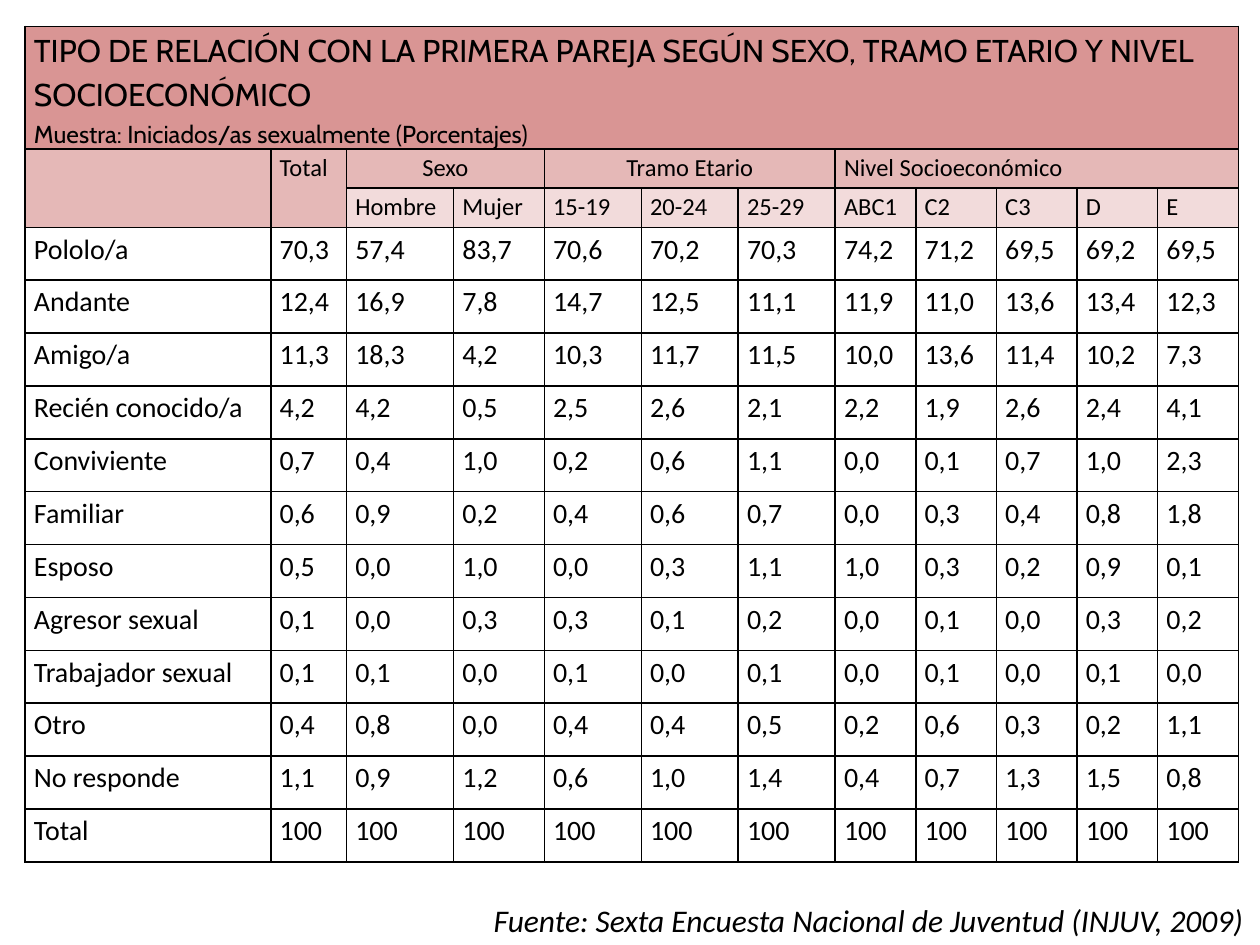
from lxml import etree
from pptx import Presentation
from pptx import util as u
from pptx.dml.color import RGBColor
from pptx.enum import text
from pptx.oxml.ns import qn

COLORS = {
    "ink": "000000",
    "title": "D99594",
    "group": "E5B8B7",
    "category": "F2DBDB",
}
COLUMN_WIDTHS = [1.95, 0.6, 0.85, 0.72] + [0.77] * 3 + [0.64] * 5
ROW_HEIGHTS = [0.77, 0.31, 0.31] + [0.42] * 12

TITLE = ("TIPO DE RELACIÓN CON LA PRIMERA PAREJA SEGÚN SEXO, "
         "TRAMO ETARIO Y NIVEL SOCIOECONÓMICO")
SUBTITLE = "Muestra: Iniciados/as sexualmente (Porcentajes)"
SOURCE = "Fuente: Sexta Encuesta Nacional de Juventud (INJUV, 2009)"

# First column, last column, last row, label, centred
GROUPS = [
    (0, 0, 2, "", False),
    (1, 1, 2, "Total", False),
    (2, 3, 1, "Sexo", True),
    (4, 6, 1, "Tramo Etario", True),
    (7, 11, 1, "Nivel Socioeconómico", False),
]
CATEGORIES = "Hombre Mujer 15-19 20-24 25-29 ABC1 C2 C3 D E".split()
PERCENTAGES = {
    "Pololo/a": "70,3 57,4 83,7 70,6 70,2 70,3 74,2 71,2 69,5 69,2 69,5",
    "Andante": "12,4 16,9 7,8 14,7 12,5 11,1 11,9 11,0 13,6 13,4 12,3",
    "Amigo/a": "11,3 18,3 4,2 10,3 11,7 11,5 10,0 13,6 11,4 10,2 7,3",
    "Recién conocido/a": "4,2 4,2 0,5 2,5 2,6 2,1 2,2 1,9 2,6 2,4 4,1",
    "Conviviente": "0,7 0,4 1,0 0,2 0,6 1,1 0,0 0,1 0,7 1,0 2,3",
    "Familiar": "0,6 0,9 0,2 0,4 0,6 0,7 0,0 0,3 0,4 0,8 1,8",
    "Esposo": "0,5 0,0 1,0 0,0 0,3 1,1 1,0 0,3 0,2 0,9 0,1",
    "Agresor sexual": "0,1 0,0 0,3 0,3 0,1 0,2 0,0 0,1 0,0 0,3 0,2",
    "Trabajador sexual": "0,1 0,1 0,0 0,1 0,0 0,1 0,0 0,1 0,0 0,1 0,0",
    "Otro": "0,4 0,8 0,0 0,4 0,4 0,5 0,2 0,6 0,3 0,2 1,1",
    "No responde": "1,1 0,9 1,2 0,6 1,0 1,4 0,4 0,7 1,3 1,5 0,8",
    "Total": " ".join(["100"] * 11),
}


def write(para, words, size=14, font="Calibri", italic=False,
          centred=False, spacing=None):
    """Fill a paragraph with one formatted run."""
    if centred:
        para.alignment = text.PP_ALIGN.CENTER
    para.line_spacing = spacing
    span = para.add_run()
    span.text = words
    span.font.size = u.Pt(size)
    span.font.name = font
    span.font.italic = italic
    span.font.color.rgb = RGBColor.from_string(COLORS["ink"])


def write_cell(cell, words, **style):
    if words:
        write(cell.text_frame.paragraphs[0], words, spacing=1.15, **style)


def fill_cell(cell, color):
    cell.fill.solid()
    cell.fill.fore_color.rgb = RGBColor.from_string(COLORS[color])


def add_borders(cell):
    """Draw thin lines on all four sides; they come before the fill."""
    properties = cell._tc.get_or_add_tcPr()
    for place, side in enumerate(("lnL", "lnR", "lnT", "lnB")):
        line = etree.Element(qn("a:" + side), w=str(u.Pt(1)))
        solid = etree.SubElement(line, qn("a:solidFill"))
        etree.SubElement(solid, qn("a:srgbClr"), val=COLORS["ink"])
        properties.insert(place, line)


def add_grid(page):
    """Add an empty bordered table without a banded style."""
    frame = page.shapes.add_table(
        len(ROW_HEIGHTS), len(COLUMN_WIDTHS),
        u.Inches(0.2), u.Inches(0.21), u.Inches(9.61), u.Inches(6.65))
    table = frame.table
    table.first_row = table.horz_banding = False
    for column, width in zip(table.columns, COLUMN_WIDTHS):
        column.width = u.Inches(width)
    for row, height in zip(table.rows, ROW_HEIGHTS):
        row.height = u.Inches(height)
    for cell in table.iter_cells():
        cell.margin_left = cell.margin_right = u.Inches(0.07)
        cell.margin_top = cell.margin_bottom = 0
        cell.fill.background()
        add_borders(cell)
    return table


def fill_headings(table):
    # Title band
    title = table.cell(0, 0)
    title.merge(table.cell(0, len(COLUMN_WIDTHS) - 1))
    fill_cell(title, "title")
    write_cell(title, TITLE, size=18, font="Cabin")
    write(title.text_frame.add_paragraph(), SUBTITLE, font="Cabin",
          spacing=1.15)

    # Grouped headings
    for first, last, bottom, label, centred in GROUPS:
        cell = table.cell(1, first)
        cell.merge(table.cell(bottom, last))
        fill_cell(cell, "group")
        write_cell(cell, label, centred=centred)

    # Category headings
    for column, label in enumerate(CATEGORIES, start=2):
        cell = table.cell(2, column)
        fill_cell(cell, "category")
        write_cell(cell, label)


def fill_percentages(table):
    for row, (label, values) in enumerate(PERCENTAGES.items(), start=3):
        for column, words in enumerate([label] + values.split()):
            write_cell(table.cell(row, column), words, size=16)


def add_source(page):
    box = page.shapes.add_textbox(
        u.Inches(3.82), u.Inches(7.1), u.Inches(6.18), u.Inches(0.4))
    box.text_frame.word_wrap = True
    box.text_frame.auto_size = text.MSO_AUTO_SIZE.SHAPE_TO_FIT_TEXT
    write(box.text_frame.paragraphs[0], SOURCE, size=18, italic=True)


def main():
    deck = Presentation()
    deck.slide_width, deck.slide_height = u.Inches(10), u.Inches(7.5)
    page = deck.slides.add_slide(deck.slide_layouts[6])
    table = add_grid(page)
    fill_headings(table)
    fill_percentages(table)
    add_source(page)
    deck.save("out.pptx")


if __name__ == "__main__":
    main()
